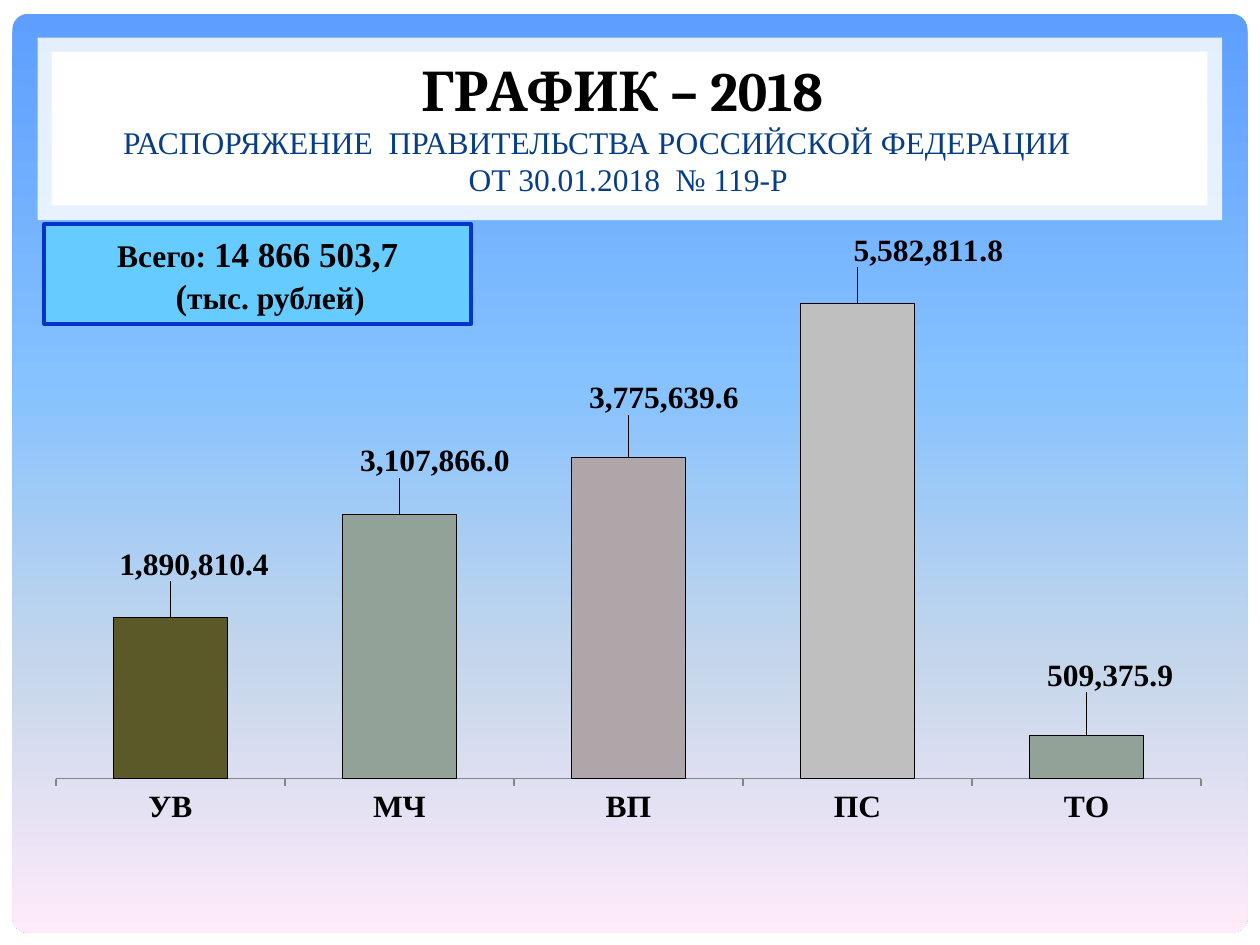
from lxml.etree import SubElement
from pptx import Presentation
from pptx.chart.data import CategoryChartData
from pptx.dml.color import RGBColor
from pptx.enum.chart import XL_CHART_TYPE as ChartType, XL_LABEL_POSITION as LabelPosition
from pptx.enum.chart import XL_TICK_LABEL_POSITION as TickLabels, XL_TICK_MARK as Tick
from pptx.enum.shapes import MSO_SHAPE as Shape
from pptx.enum.text import MSO_ANCHOR as Anchor, MSO_AUTO_SIZE as AutoSize, PP_ALIGN as Align
from pptx.oxml import parse_xml
from pptx.oxml.ns import nsdecls, qn
from pptx.util import Cm, Pt

SKY = [(0, "5E9EFF"), (40, "85C2FF"), (70, "C4D6EB"), (100, "FFEBFA")]
NUMBER_FORMAT = "#,##0.0"


def color(value):
    return RGBColor.from_string(value)


def manual_layout(**values):
    """Build a chart layout from its settings, in schema order."""
    layout = parse_xml(f"<c:layout {nsdecls('c')}><c:manualLayout/></c:layout>")
    for name, value in values.items():
        SubElement(layout[0], qn(f"c:{name}")).set("val", str(value))
    return layout


class SlideBuilder:
    font = "Times New Roman"
    black = "000000"

    def __init__(self, slide):
        self.slide = slide

    def gradient(self, fill, owner, stops):
        fill.gradient()
        fill.gradient_angle = 270
        stop_list = owner.find(f".//{qn('a:gsLst')}")
        for stop in list(stop_list):
            stop_list.remove(stop)
        for position, value in stops:
            stop = SubElement(stop_list, qn("a:gs"), pos=str(position * 1000))
            SubElement(stop, qn("a:srgbClr"), val=value)

    def panel(self, box, fill, kind=Shape.RECTANGLE, line=None, alpha=None):
        shape = self.slide.shapes.add_shape(kind, *map(Cm, box))
        shape.shadow.inherit = False
        if isinstance(fill, list):
            self.gradient(shape.fill, shape.element, fill)
        else:
            shape.fill.solid()
            shape.fill.fore_color.rgb = color(fill)
        if alpha:
            rgb = shape.element.spPr.find(f".//{qn('a:srgbClr')}")
            SubElement(rgb, qn("a:alpha"), val=str(alpha * 1000))
        if line:
            shape.line.color.rgb = color(line)
            shape.line.width = Pt(2)
        else:
            shape.line.fill.background()
        return shape

    def paragraph(self, frame, runs, align=Align.CENTER, indent=0):
        """Add one paragraph; each run is text, size, bold, colour, font."""
        paragraph = frame.paragraphs[0]
        if paragraph.runs:
            paragraph = frame.add_paragraph()
        paragraph.alignment = align
        paragraph.space_before = Pt(0)
        properties = paragraph._p.get_or_add_pPr()
        properties.set("marL", str(Cm(indent)))
        properties.set("indent", "0")
        for text, size, bold, value, name in runs:
            run = paragraph.add_run()
            run.text = text
            self.style(run.font, size, bold, value, name)

    def style(self, font, size, bold=True, value=black, name=font):
        font.size = Pt(size)
        font.bold = bold
        font.name = name
        font.color.rgb = color(value)

    def title(self, box, lines):
        title = self.slide.shapes.title
        title.left, title.top, title.width, title.height = map(Cm, box)
        # Bring the title in front of the panels
        self.slide.shapes.element.append(title.element)
        frame = title.text_frame
        frame.word_wrap = True
        frame.auto_size = AutoSize.NONE
        frame.vertical_anchor = Anchor.TOP
        frame.margin_top = 0
        for runs, align, indent in lines:
            self.paragraph(frame, runs, align, indent)

    def column_chart(self, box, bars):
        data = CategoryChartData(number_format=NUMBER_FORMAT)
        data.categories = [bar[0] for bar in bars]
        data.add_series("Series 1", [bar[1] for bar in bars])
        chart = self.slide.shapes.add_chart(
            ChartType.COLUMN_CLUSTERED, *map(Cm, box), data).chart
        chart.has_legend = chart.has_title = False
        self.style(chart.font, 18, False, name="Quicksand")
        self.axes(chart)

        plot = chart.plots[0]
        plot.gap_width = 100
        plot.vary_by_categories = False
        area = chart._chartSpace.chart.plotArea
        for old in area.findall(qn("c:layout")):
            area.remove(old)
        area.insert(0, manual_layout(layoutTarget="inner", xMode="edge", yMode="edge",
                                     x=0.01, y=0, w=0.97, h=0.855))
        for index, (_, _, fill, offset) in enumerate(bars):
            self.bar(plot.series[0].points[index], fill, offset)

    def axes(self, chart):
        value_axis = chart.value_axis
        value_axis.minimum_scale = 0
        value_axis.maximum_scale = 6270000
        value_axis.has_major_gridlines = False
        value_axis.visible = False
        category_axis = chart.category_axis
        category_axis.major_tick_mark = Tick.OUTSIDE
        category_axis.tick_label_position = TickLabels.LOW
        category_axis.format.line.color.rgb = color("868686")
        self.style(category_axis.tick_labels.font, 18)

    def bar(self, point, fill, offset):
        point.format.fill.solid()
        point.format.fill.fore_color.rgb = color(fill)
        point.format.line.color.rgb = color(self.black)
        point.format.line.width = Pt(0.75)
        label = point.data_label
        self.style(label.font, 18)
        label.position = LabelPosition.OUTSIDE_END
        # Shift the label and give it its number format
        element = label._dLbl
        layout = manual_layout(x=offset[0], y=offset[1])
        element.insert(1, layout)
        layout.addnext(parse_xml(
            f'<c:numFmt {nsdecls("c")} formatCode="{NUMBER_FORMAT}" sourceLinked="0"/>'))


def main():
    presentation = Presentation()
    presentation.slide_width, presentation.slide_height = Cm(25.4), Cm(19.05)
    slide = presentation.slides.add_slide(presentation.slide_layouts[5])
    builder = SlideBuilder(slide)
    black, font, blue = builder.black, builder.font, "073E87"

    # Background and header frame
    builder.gradient(slide.background.fill, slide.element, SKY)
    builder.panel((0, 0, 25.4, 19.05), "FFFFFF")
    backdrop = builder.panel((0.25, 0.28, 24.9, 18.52), SKY, Shape.ROUNDED_RECTANGLE)
    backdrop.adjustments[0] = 0.017
    builder.panel((0.76, 0.76, 23.88, 3.68), "FFFFFF", alpha=83)
    builder.panel((1.04, 1.04, 23.3, 3.1), "FFFFFF")

    # Title
    builder.title((1.2, 1.14, 22.93, 3.58), [
        ([("ГРАФИК – 2018 ", 31.5, True, black, "Cambria")], Align.CENTER, 0),
        ([("РАСПОРЯЖЕНИЕ  ПРАВИТЕЛЬСТВА РОССИЙСКОЙ ФЕДЕРАЦИИ", 18, False, blue, font)],
         Align.LEFT, 1.03),
        ([("ОТ 30.01.2018  № 119-Р", 18, False, blue, font)], Align.CENTER, 0),
    ])

    # Chart: category, value, fill, label shift
    builder.column_chart((0.89, 4.72, 23.8, 12.8), [
        ("УВ", 1890810.4, "5C5928", (0.02, -0.05)),
        ("МЧ", 3107866, "93A299", (0.03, -0.05)),
        ("ВП", 3775639.6, "AFA6AA", (0.03, -0.06)),
        ("ПС", 5582811.8, "BFBFBF", (0.06, -0.05)),
        ("ТО", 509375.9, "93A299", (0.02, -0.06)),
    ])

    # Total
    total = builder.panel((0.89, 4.52, 8.61, 2.01), "66CCFF", line="0033CC")
    frame = total.text_frame
    frame.word_wrap = True
    frame.vertical_anchor = Anchor.MIDDLE
    builder.paragraph(frame, [("Всего: ", 18, True, black, font),
                              ("14 866 503,7", 20, True, black, font)])
    builder.paragraph(frame, [("(", 20, True, black, font),
                              ("тыс. рублей)", 18, True, black, font)], indent=0.5)

    presentation.save("out.pptx")


if __name__ == "__main__":
    main()
